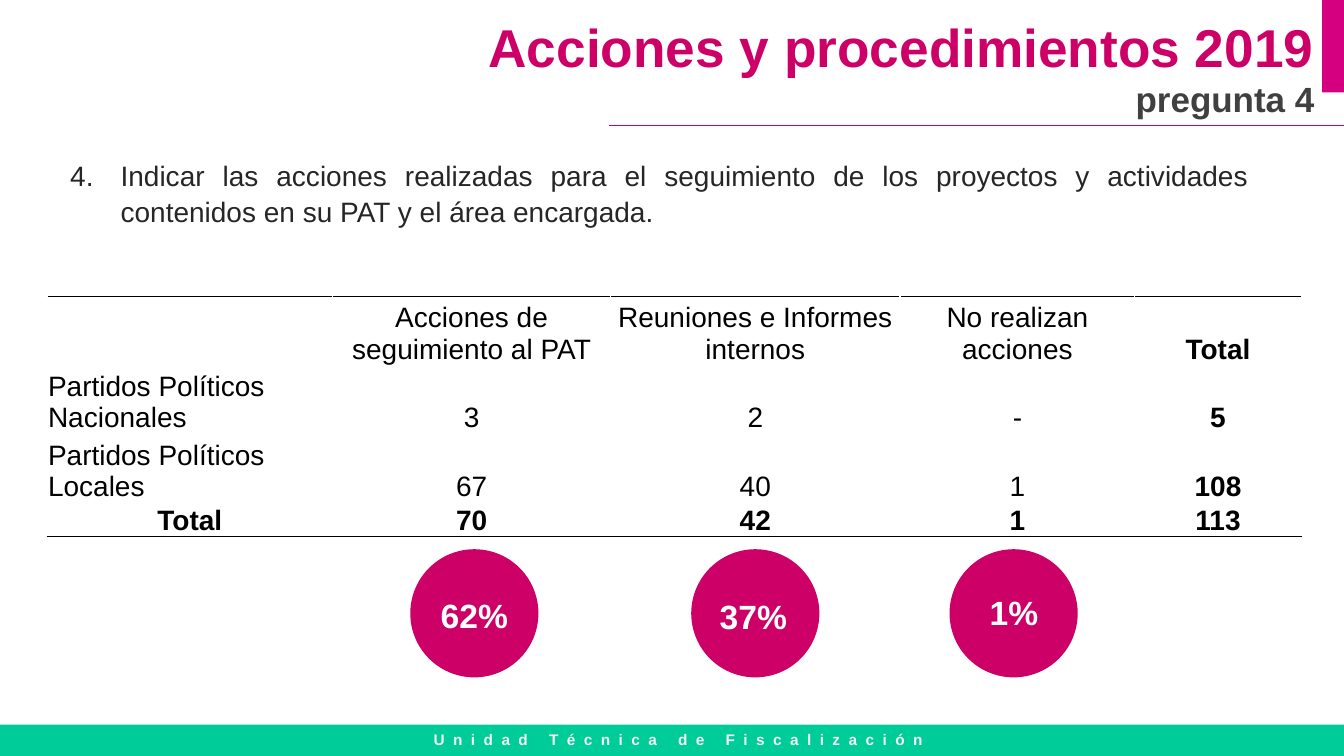
from lxml import etree
from pptx import Presentation
from pptx.dml.color import RGBColor
from pptx.enum.shapes import MSO_CONNECTOR, MSO_SHAPE
from pptx.enum.text import MSO_ANCHOR, MSO_AUTO_SIZE, PP_ALIGN
from pptx.oxml import parse_xml
from pptx.oxml.ns import nsdecls, qn
from pptx.util import Cm, Pt

MAGENTA = "CC0066"

prs = Presentation()
prs.slide_width, prs.slide_height = Cm(33.87), Cm(19.05)
s = prs.slides.add_slide(prs.slide_layouts[6])


def add_block(kind, box, color):
    """Add a filled preset shape without outline; box is in centimetres."""
    sp = s.shapes.add_shape(kind, *map(Cm, box))
    sp.shadow.inherit = False
    sp.fill.solid()
    sp.fill.fore_color.rgb = RGBColor.from_string(color)
    sp.line.fill.background()


def add_run(p, text, size, color, bold=True):
    r = p.add_run()
    r.text = text
    for name, value in {"name": "Arial", "size": Pt(size), "bold": bold}.items():
        setattr(r.font, name, value)
    r.font.color.rgb = RGBColor.from_string(color)
    return r


# Footer and corner bar
add_block(MSO_SHAPE.RECTANGLE, (0, 18.26, 33.87, 0.79), "00CC99")
add_block(MSO_SHAPE.RECTANGLE, (33.32, 0, 0.55, 2.33), "D5007F")

# Rule under the title
rule = s.shapes.add_connector(MSO_CONNECTOR.STRAIGHT, Cm(15.34), Cm(3.17), Cm(33.87), Cm(3.17))
rule.line.color.rgb = RGBColor.from_string(MAGENTA)
rule.line.width = Pt(0.5)
etree.SubElement(rule._element.spPr, qn("a:effectLst"))

# Circles behind the percentages
for left in (10.34, 17.42, 23.93):
    add_block(MSO_SHAPE.OVAL, (left, 13.84, 3.23, 3.23), MAGENTA)

# Text boxes: place, alignment, runs
labels = [
    ((0.33, 18.26, 33.53, 0.74), PP_ALIGN.CENTER, [("Unidad Técnica de Fiscalización", 11, "F2F2F2")]),
    ((10.74, 0.23, 22.63, 2.95), PP_ALIGN.RIGHT,
     [("Acciones y procedimientos 2019 ", 38, MAGENTA), ("pregunta 4", 25, "404040")]),
    ((10.34, 14.86, 3.23, 1.28), PP_ALIGN.CENTER, [("62%", 24, "FFFFFF")]),
    ((17.37, 14.88, 3.23, 1.28), PP_ALIGN.CENTER, [("37%", 24, "FFFFFF")]),
    ((24.26, 14.78, 2.59, 1.28), PP_ALIGN.CENTER, [("1%", 24, "FFFFFF")]),
]
for box, align, runs in labels:
    tf = s.shapes.add_textbox(*map(Cm, box)).text_frame
    tf.word_wrap = True
    tf.auto_size = MSO_AUTO_SIZE.SHAPE_TO_FIT_TEXT
    p = tf.paragraphs[0]
    p.alignment = align
    for run in runs:
        r = add_run(p, *run)
    if run[0].startswith("Unidad"):
        tf.vertical_anchor = MSO_ANCHOR.MIDDLE
        r.font._element.set("spc", "600")

# Numbered question
tf = s.shapes.add_textbox(Cm(1.52), Cm(3.81), Cm(30.2), Cm(3.2)).text_frame
tf.word_wrap = True
p = tf.paragraphs[0]
p.alignment = PP_ALIGN.JUSTIFY
p.line_spacing = 1.07
pPr = p._p.get_or_add_pPr()
pPr.set("marL", str(Cm(1.27)))
pPr.set("indent", str(-Cm(1.27)))
etree.SubElement(pPr, qn("a:buFont"), typeface="+mj-lt")
etree.SubElement(pPr, qn("a:buAutoNum"), type="arabicPeriod", startAt="4")
add_run(p, "Indicar las acciones realizadas para el seguimiento de los proyectos y actividades "
        "contenidos en su PAT y el área encargada.", 20, "262626", False)

# Table
rows = [
    ["", "Acciones de seguimiento al PAT", "Reuniones e Informes internos", "No realizan acciones", "Total"],
    ["Partidos Políticos Nacionales", "3", "2", "-", "5"],
    ["Partidos Políticos Locales", "67", "40", "1", "108"],
    ["Total", "70", "42", "1", "113"],
]
widths = [7.19, 7.01, 7.29, 5.92, 4.19]
heights = [1.73, 1.73, 1.73, 0.86]
table = s.shapes.add_table(len(rows), len(widths), Cm(1.19), Cm(7.47),
                           Cm(sum(widths)), Cm(sum(heights))).table
table.first_row = table.horz_banding = False
for column, width in zip(table.columns, widths):
    column.width = Cm(width)
cell_format = {"margin_left": Cm(0.02), "margin_right": Cm(0.02), "margin_top": Cm(0.02),
               "margin_bottom": 0, "vertical_anchor": MSO_ANCHOR.BOTTOM}
borders = {0: "lnT", len(rows) - 1: "lnB"}
for i, row in enumerate(rows):
    table.rows[i].height = Cm(heights[i])
    for j, text in enumerate(row):
        cell = table.cell(i, j)
        for name, value in cell_format.items():
            setattr(cell, name, value)
        cell.fill.background()
        if i in borders:
            cell._tc.get_or_add_tcPr().insert(0, parse_xml(
                f'<a:{borders[i]} {nsdecls("a")} w="12700"><a:solidFill><a:srgbClr val="000000"/>'
                f'</a:solidFill></a:{borders[i]}>'))
        if text:
            p = cell.text_frame.paragraphs[0]
            p.alignment = PP_ALIGN.LEFT if text.startswith("Partidos") else PP_ALIGN.CENTER
            add_run(p, text, 20, "000000", "Total" in (row[0], rows[0][j]))

prs.save("out.pptx")
